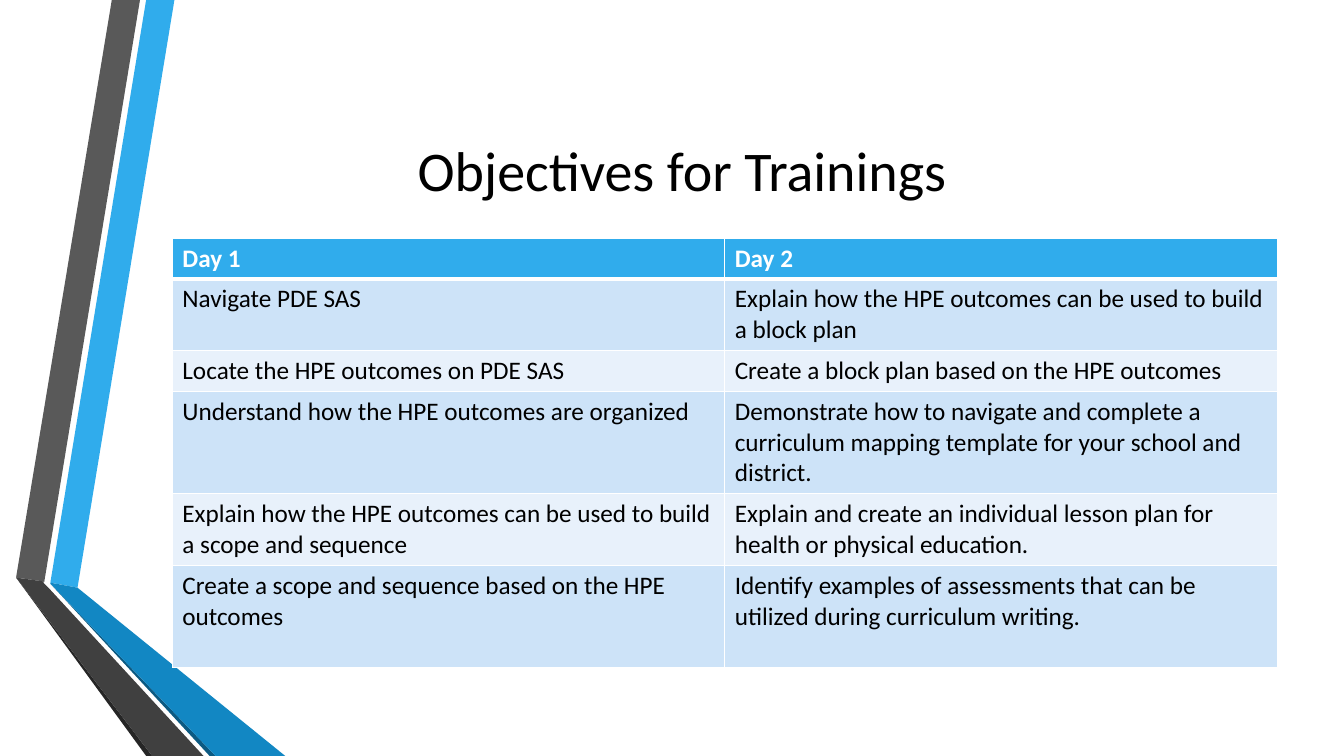
from dataclasses import dataclass

import pptx
import pptx.dml.color
import pptx.enum.text
import pptx.oxml
import pptx.oxml.ns
import pptx.util

Pt = pptx.util.Pt
FONT = "Calibri"
WHITE, BLACK, BLUE = "FFFFFF", "000000", "30ACEC"
DARK, LIGHT = "CDE3F8", "E8F1FB"


@dataclass
class Band:
    color: str
    points: list[tuple[float, float]]


@dataclass
class Row:
    height: float
    texts: tuple[str, str]


BANDS = [
    Band(BLUE, [(36, 416.2), (55.4, 419.8), (124.6, 0), (104.4, 0)]),
    Band("595959", [(100, 0), (79.9, 0), (11.5, 412.6), (31.7, 415.4)]),
    Band("262626", [(11.5, 412.6), (104.4, 540), (108.7, 540)]),
    Band("0C5A82", [(36, 416.9), (149.8, 540), (154.1, 540)]),
    Band("1287C3", [(36, 416.2), (36, 416.9), (154.1, 540), (203.8, 540),
                    (55.4, 419.8)]),
    Band("404040", [(145.4, 540), (34.6, 419.8), (31, 416.2), (31.7, 415.4),
                    (11.5, 412.6), (108.7, 540)]),
]

ROWS = [
    Row(29.2, ("Day 1", "Day 2")),
    Row(51.1, ("Navigate PDE SAS",
               "Explain how the HPE outcomes can be used to build a block plan")),
    Row(29.2, ("Locate the HPE outcomes on PDE SAS",
               "Create a block plan based on the HPE outcomes")),
    Row(73.1, ("Understand how the HPE outcomes are organized",
               "Demonstrate how to navigate and complete a curriculum mapping "
               "template for your school and district.")),
    Row(51.1, ("Explain how the HPE outcomes can be used to build a scope and sequence",
               "Explain and create an individual lesson plan for health or "
               "physical education.")),
    Row(73.1, ("Create a scope and sequence based on the HPE outcomes",
               "Identify examples of assessments that can be utilized during "
               "curriculum writing.")),
]


def rgb(color: str) -> pptx.dml.color.RGBColor:
    return pptx.dml.color.RGBColor.from_string(color)


def paint(fill, color: str) -> None:
    fill.solid()
    fill.fore_color.rgb = rgb(color)


def style(font, color: str, **values) -> None:
    for name, value in {"name": FONT, **values}.items():
        setattr(font, name, value)
    font.color.rgb = rgb(color)


def draw_band(shapes, band: Band) -> None:
    points = [(Pt(x), Pt(y)) for x, y in band.points]
    builder = shapes.build_freeform(*points[0], scale=1.0)
    builder.add_line_segments(points[1:], close=True)
    shape = builder.convert_to_shape()
    shape.shadow.inherit = False
    shape.line.fill.background()
    paint(shape.fill, band.color)


def add_edges(cell, widths: dict[str, float]) -> None:
    props = cell._tc.get_or_add_tcPr()
    for side, width in widths.items():
        props.append(pptx.oxml.parse_xml(
            f'<a:ln{side} {pptx.oxml.ns.nsdecls("a")} w="{Pt(width)}">'
            f'<a:solidFill><a:srgbClr val="{WHITE}"/></a:solidFill></a:ln{side}>'))


def draw_table(shapes, rows: list[Row]) -> None:
    height = sum(row.height for row in rows)
    table = shapes.add_table(len(rows), 2, Pt(123.1), Pt(170),
                             Pt(789.2), Pt(height)).table
    for i, row in enumerate(rows):
        head = i == 0
        table.rows[i].height = Pt(row.height)
        back = BLUE if head else DARK if i % 2 else LIGHT
        edges = {"L": 1, "R": 1, "T": 3 if i == 1 else 1, "B": 3 if head else 1}
        for cell, text in zip(table.rows[i].cells, row.texts):
            add_edges(cell, edges)
            paint(cell.fill, back)
            cell.text = text
            style(cell.text_frame.paragraphs[0].runs[0].font,
                  WHITE if head else BLACK, size=Pt(18), bold=head)


def draw_title(title, text: str) -> None:
    box = {"left": 123.1, "top": 82.1, "width": 727.9, "height": 77.8}
    for name, value in box.items():
        setattr(title, name, Pt(value))
    frame = title.text_frame
    frame.text = text
    frame.vertical_anchor = pptx.enum.text.MSO_ANCHOR.MIDDLE
    line = frame.paragraphs[0]
    line.alignment = pptx.enum.text.PP_ALIGN.CENTER
    style(line.runs[0].font, BLACK, size=Pt(40))


def main() -> None:
    deck = pptx.Presentation()
    deck.slide_width, deck.slide_height = Pt(960), Pt(540)
    slide = deck.slides.add_slide(deck.slide_layouts[5])
    paint(slide.background.fill, WHITE)

    # Folded ribbons on the left
    for band in BANDS:
        draw_band(slide.shapes, band)

    # Title and objectives
    draw_title(slide.shapes.title, "Objectives for Trainings")
    draw_table(slide.shapes, ROWS)

    deck.save("out.pptx")


if __name__ == "__main__":
    main()
